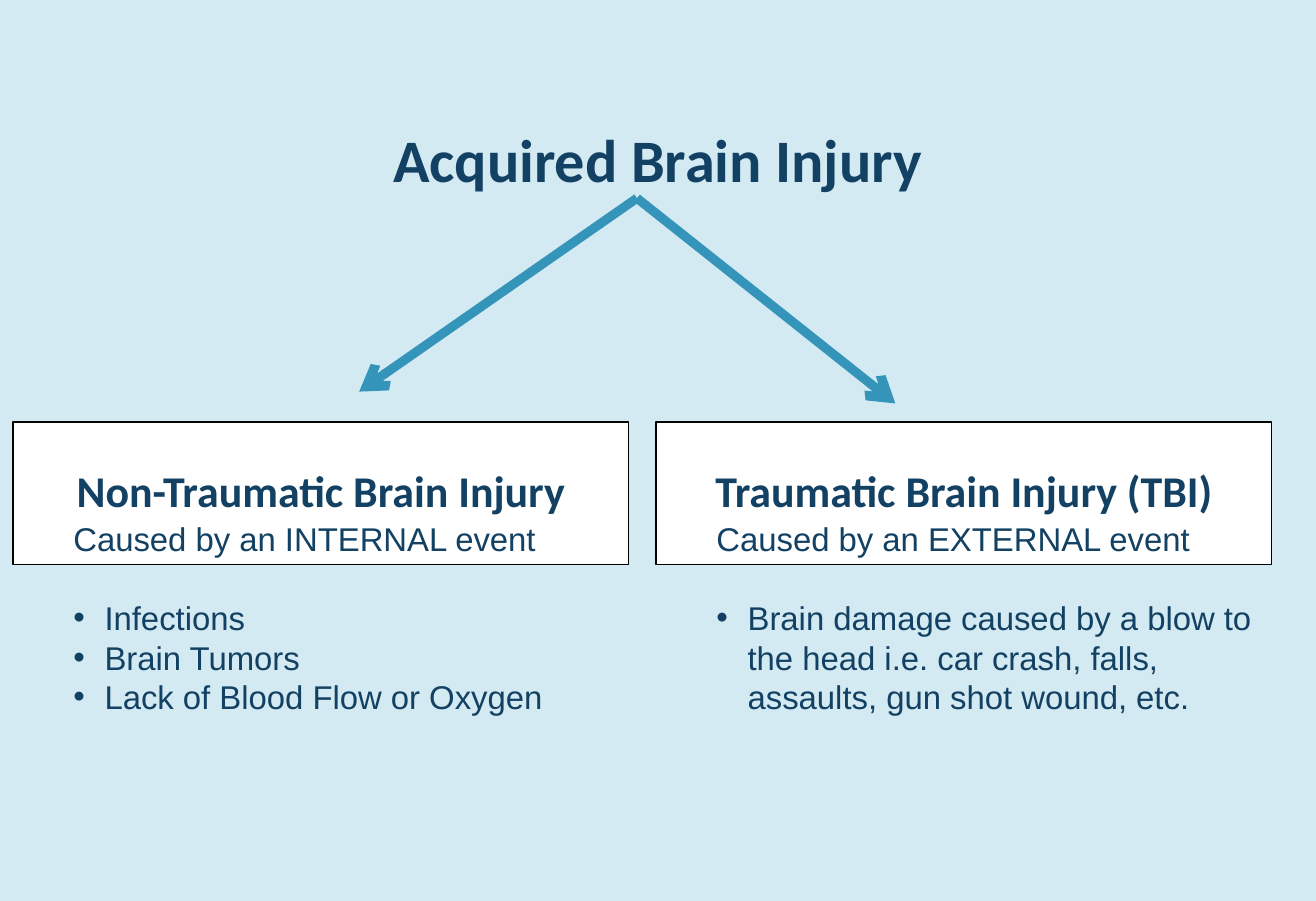
from dataclasses import dataclass

from lxml import etree
from pptx import Presentation
from pptx.dml.color import RGBColor
from pptx.enum.shapes import MSO_CONNECTOR, MSO_SHAPE
from pptx.enum.text import MSO_ANCHOR, MSO_AUTO_SIZE, PP_ALIGN
from pptx.oxml.ns import qn
from pptx.util import Cm, Pt

RECTANGLE = MSO_SHAPE.RECTANGLE
STRAIGHT = MSO_CONNECTOR.STRAIGHT
MIDDLE = MSO_ANCHOR.MIDDLE
TOP = MSO_ANCHOR.TOP
GROW = MSO_AUTO_SIZE.SHAPE_TO_FIT_TEXT
CENTER = PP_ALIGN.CENTER
LEFT = PP_ALIGN.LEFT


@dataclass(frozen=True)
class Theme:
    """Colours, fonts and sizes of the slide."""
    background: RGBColor = RGBColor(0xD4, 0xEA, 0xF3)
    ink: RGBColor = RGBColor(0x13, 0x41, 0x63)
    arrow: RGBColor = RGBColor(0x34, 0x94, 0xBA)
    panel: RGBColor = RGBColor(0xFF, 0xFF, 0xFF)
    border: RGBColor = RGBColor(0, 0, 0)
    heading_font: str = "Calibri"
    body_font: str = "Arial"
    title_size: float = 36.1
    heading_size: float = 26.3
    body_size: float = 19.7
    body_leading: float = 23.6
    arrow_width: float = 5.5


THEME = Theme()
HEADING_STYLE = {"font": THEME.heading_font, "bold": True, "align": CENTER, "leading": 0.9}
BODY_STYLE = {"font": THEME.body_font, "size": THEME.body_size, "leading": Pt(THEME.body_leading)}

COLUMN_TOP, COLUMN_WIDTH, COLUMN_HEIGHT = 8.92, 13, 3.02
COLUMN_LEFT, COLUMN_PITCH = 0.28, 13.59
ARROW_START = (13.46, 4.19)
ARROW_ENDS = ((7.59, 8.28), (18.92, 8.53))
COLUMNS = (
    ("Non-Traumatic Brain Injury", "Caused by an INTERNAL event",
     ("Infections", "Brain Tumors", "Lack of Blood Flow or Oxygen")),
    ("Traumatic Brain Injury (TBI)", "Caused by an EXTERNAL event",
     ("Brain damage caused by a blow to the head i.e. car crash, falls, "
      "assaults, gun shot wound, etc.",)),
)


def write(paragraph, text, *, font, size, bold=False, align=LEFT, leading=1.0, before=0):
    """Put formatted text into a paragraph."""
    paragraph.alignment = align
    paragraph.line_spacing = leading
    paragraph.space_before = Pt(before)
    run = paragraph.add_run()
    run.text = text
    run.font.name = font
    run.font.size = Pt(size)
    run.font.bold = bold
    run.font.color.rgb = THEME.ink


def add_bullet(paragraph):
    """Give a paragraph a round bullet and a hanging indent."""
    properties = paragraph._p.get_or_add_pPr()
    properties.set("marL", str(Cm(0.66)))
    properties.set("indent", str(-Cm(0.66)))
    etree.SubElement(properties, qn("a:buFont"), typeface=THEME.body_font)
    etree.SubElement(properties, qn("a:buChar"), char="•")


def add_text_box(slide, left, top, width, height, anchor=TOP):
    """Add a wrapping text box and return its text frame."""
    box = slide.shapes.add_textbox(Cm(left), Cm(top), Cm(width), Cm(height))
    box.text_frame.word_wrap = True
    box.text_frame.vertical_anchor = anchor
    return box.text_frame


def add_title(slide, left, top, width, height):
    """Add the centred slide title."""
    frame = add_text_box(slide, left, top, width, height, MIDDLE)
    write(frame.paragraphs[0], "Acquired Brain Injury", size=THEME.title_size, **HEADING_STYLE)


def add_arrow(slide, start, end):
    """Add a thick arrow between two points."""
    connector = slide.shapes.add_connector(STRAIGHT, *map(Cm, start + end))
    connector.line.color.rgb = THEME.arrow
    connector.line.width = Pt(THEME.arrow_width)
    etree.SubElement(connector.line._get_or_add_ln(), qn("a:tailEnd"), type="arrow")
    etree.SubElement(connector._element.spPr, qn("a:effectLst"))


def add_panel(slide, heading, left, top, width, height):
    """Add the white bordered panel with its heading."""
    panel = slide.shapes.add_shape(RECTANGLE, Cm(left), Cm(top), Cm(width), Cm(height))
    panel.shadow.inherit = False
    panel.fill.solid()
    panel.fill.fore_color.rgb = THEME.panel
    panel.line.color.rgb = THEME.border
    panel.line.width = Pt(1)
    frame = panel.text_frame
    frame.word_wrap = True
    frame.vertical_anchor = MIDDLE
    frame.margin_left = frame.margin_right = Cm(0.2)
    frame.margin_top = frame.margin_bottom = Cm(0.1)
    write(frame.paragraphs[0], heading, size=THEME.heading_size, **HEADING_STYLE)


def add_column(slide, heading, cause, examples, left, top, width, height):
    """Add one kind of injury: panel, cause and bulleted examples."""
    add_panel(slide, heading, left, top, width, height)
    frame = add_text_box(slide, left + 1.02, top + 1.93, width - 1.02, 5.31)
    frame.auto_size = GROW
    write(frame.paragraphs[0], cause, **BODY_STYLE)
    for index, example in enumerate(examples):
        paragraph = frame.add_paragraph()
        write(paragraph, example, before=0 if index else THEME.body_leading, **BODY_STYLE)
        add_bullet(paragraph)


def main():
    """Build and save the presentation."""
    presentation = Presentation()
    presentation.slide_width, presentation.slide_height = Cm(27.81), Cm(19.05)
    slide = presentation.slides.add_slide(presentation.slide_layouts[6])
    slide.background.fill.solid()
    slide.background.fill.fore_color.rgb = THEME.background
    add_title(slide, 1.91, 1.93, 23.98, 3.02)
    for end in ARROW_ENDS:
        add_arrow(slide, ARROW_START, end)
    for index, column in enumerate(COLUMNS):
        left = COLUMN_LEFT + index * COLUMN_PITCH
        add_column(slide, *column, left, COLUMN_TOP, COLUMN_WIDTH, COLUMN_HEIGHT)
    presentation.save("out.pptx")


if __name__ == "__main__":
    main()
